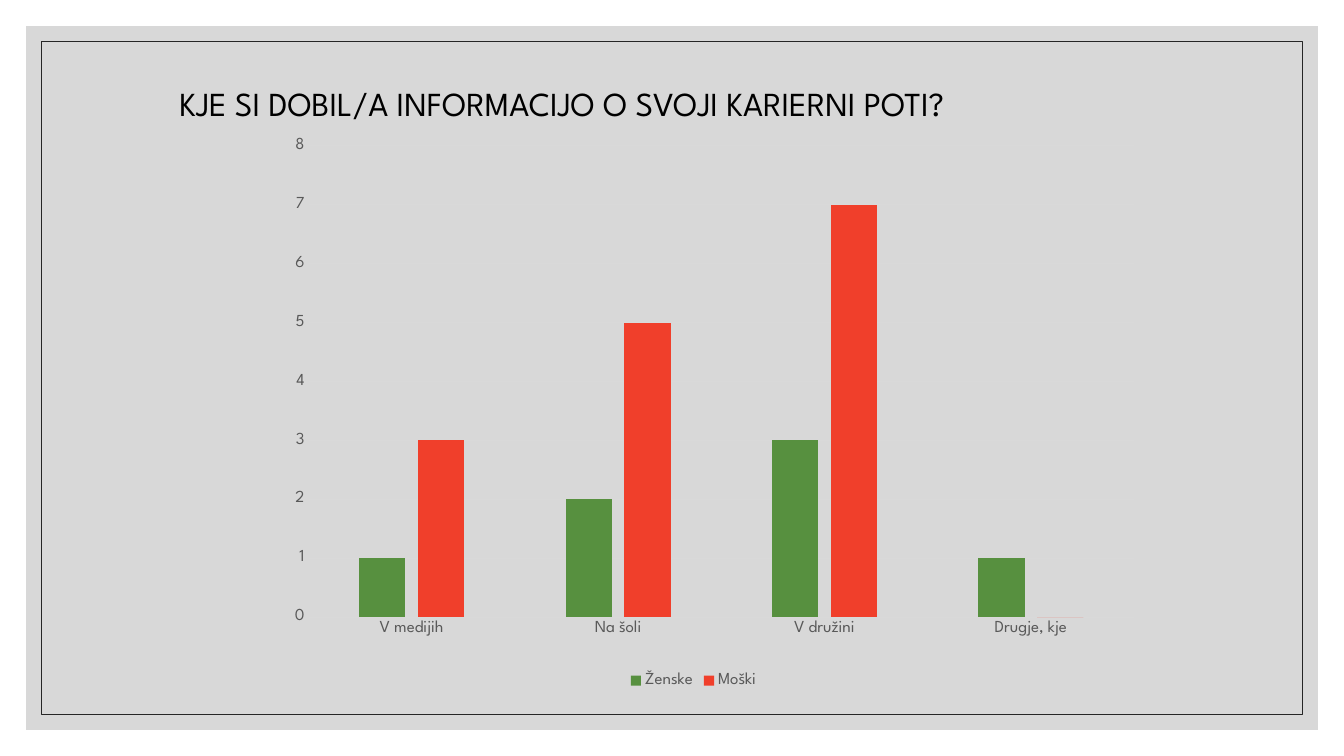
from lxml import etree
from pptx import Presentation
from pptx.chart.data import CategoryChartData
from pptx.dml.color import RGBColor
from pptx.enum.chart import XL_CHART_TYPE, XL_LEGEND_POSITION, XL_TICK_MARK
from pptx.enum.shapes import MSO_SHAPE
from pptx.enum.text import MSO_AUTO_SIZE
from pptx.oxml import parse_xml
from pptx.oxml.ns import nsdecls, qn
from pptx.util import Pt

FONT = "League Spartan"
PANEL_GRAY = RGBColor(0xBF, 0xBF, 0xBF)
FRAME_DARK = RGBColor(0x26, 0x26, 0x26)
BLACK = RGBColor(0, 0, 0)
LABEL_GRAY = RGBColor(0x59, 0x59, 0x59)
GRID_GRAY = RGBColor(0xD9, 0xD9, 0xD9)
GREEN = RGBColor(0x57, 0x90, 0x3F)
RED = RGBColor(0xF0, 0x3F, 0x2B)

PAGE_WIDTH, PAGE_HEIGHT = 960, 540
CATEGORIES = ["V medijih", "Na šoli", "V družini", "Drugje, kje"]
SERIES = [("Ženske", (1, 2, 3, 1), GREEN), ("Moški", (3, 5, 7, 0), RED)]
# Inner plot area as fractions of the chart
PLOT_LAYOUT = {"x": 0.064, "y": 0.021, "w": 0.935, "h": 0.844}


def style_font(font, size, color):
    font.name = FONT
    font.size = Pt(size)
    font.color.rgb = color


def add_inset_rectangle(page, inset):
    rectangle = page.shapes.add_shape(
        MSO_SHAPE.RECTANGLE, Pt(inset), Pt(inset),
        Pt(PAGE_WIDTH - 2 * inset), Pt(PAGE_HEIGHT - 2 * inset))
    rectangle.shadow.inherit = False
    return rectangle


def add_background(page):
    # Translucent gray panel
    panel = add_inset_rectangle(page, 18.7)
    panel.fill.solid()
    panel.fill.fore_color.rgb = PANEL_GRAY
    panel.line.fill.background()
    color = panel.fill._xPr.find(qn("a:solidFill"))[0]
    etree.SubElement(color, qn("a:alpha"), val="60000")

    # Thin inner frame
    frame = add_inset_rectangle(page, 29.5)
    frame.fill.background()
    frame.line.color.rgb = FRAME_DARK
    frame.line.width = Pt(0.5)


def add_title(page, left, top, width, height):
    box = page.shapes.add_textbox(Pt(left), Pt(top), Pt(width), Pt(height))
    box.text_frame.word_wrap = True
    box.text_frame.auto_size = MSO_AUTO_SIZE.SHAPE_TO_FIT_TEXT
    para = box.text_frame.paragraphs[0]
    para.text = "KJE SI DOBIL/A INFORMACIJO O SVOJI KARIERNI POTI?"
    style_font(para.font, 24, BLACK)


def set_plot_layout(chart):
    plot_area = chart._chartSpace.chart.plotArea
    for old_layout in plot_area.findall(qn("c:layout")):
        plot_area.remove(old_layout)
    modes = "".join(f'<c:{side}Mode val="edge"/>' for side in "xy")
    sizes = "".join(f'<c:{key} val="{value}"/>'
                    for key, value in PLOT_LAYOUT.items())
    plot_area.insert(0, parse_xml(
        f'<c:layout {nsdecls("c")}><c:manualLayout>'
        f'<c:layoutTarget val="inner"/>{modes}{sizes}'
        '</c:manualLayout></c:layout>'))


def add_answer_chart(page, left, top, width, height):
    data = CategoryChartData()
    data.categories = CATEGORIES
    for name, values, _ in SERIES:
        data.add_series(name, values)
    chart = page.shapes.add_chart(
        XL_CHART_TYPE.COLUMN_CLUSTERED,
        Pt(left), Pt(top), Pt(width), Pt(height), data).chart
    chart.has_title = False
    style_font(chart.font, 10, BLACK)
    set_plot_layout(chart)

    # Columns
    plot = chart.plots[0]
    plot.gap_width = 219
    plot.overlap = -27
    plot.vary_by_categories = False
    for series, (_, _, color) in zip(plot.series, SERIES):
        series.format.fill.solid()
        series.format.fill.fore_color.rgb = color
        series.invert_if_negative = False

    # Axes
    for axis in (chart.category_axis, chart.value_axis):
        axis.major_tick_mark = XL_TICK_MARK.NONE
        axis.minor_tick_mark = XL_TICK_MARK.NONE
        style_font(axis.tick_labels.font, 12, LABEL_GRAY)
    chart.value_axis.format.line.fill.background()
    chart.value_axis.has_major_gridlines = True
    gridlines = chart.value_axis.major_gridlines
    for line in (chart.category_axis.format.line, gridlines.format.line):
        line.color.rgb = GRID_GRAY
        line.width = Pt(0.75)

    # Legend
    chart.has_legend = True
    chart.legend.position = XL_LEGEND_POSITION.BOTTOM
    chart.legend.include_in_layout = False
    style_font(chart.legend.font, 12, LABEL_GRAY)


def main():
    deck = Presentation()
    deck.slide_width = Pt(PAGE_WIDTH)
    deck.slide_height = Pt(PAGE_HEIGHT)
    page = deck.slides.add_slide(deck.slide_layouts[6])
    add_background(page)
    add_title(page, 121, 55.4, 718, 36)
    add_answer_chart(page, 180, 95.8, 630.7, 398.9)
    deck.save("out.pptx")


if __name__ == "__main__":
    main()
